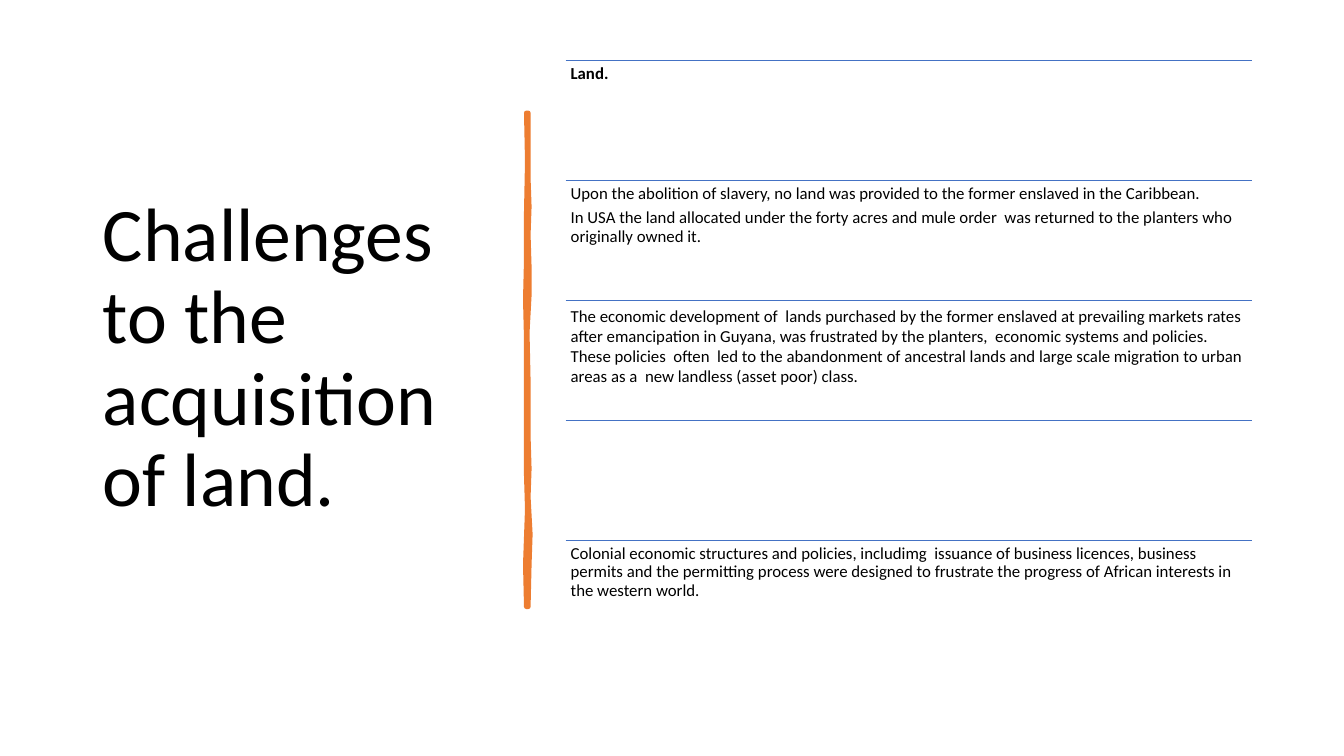
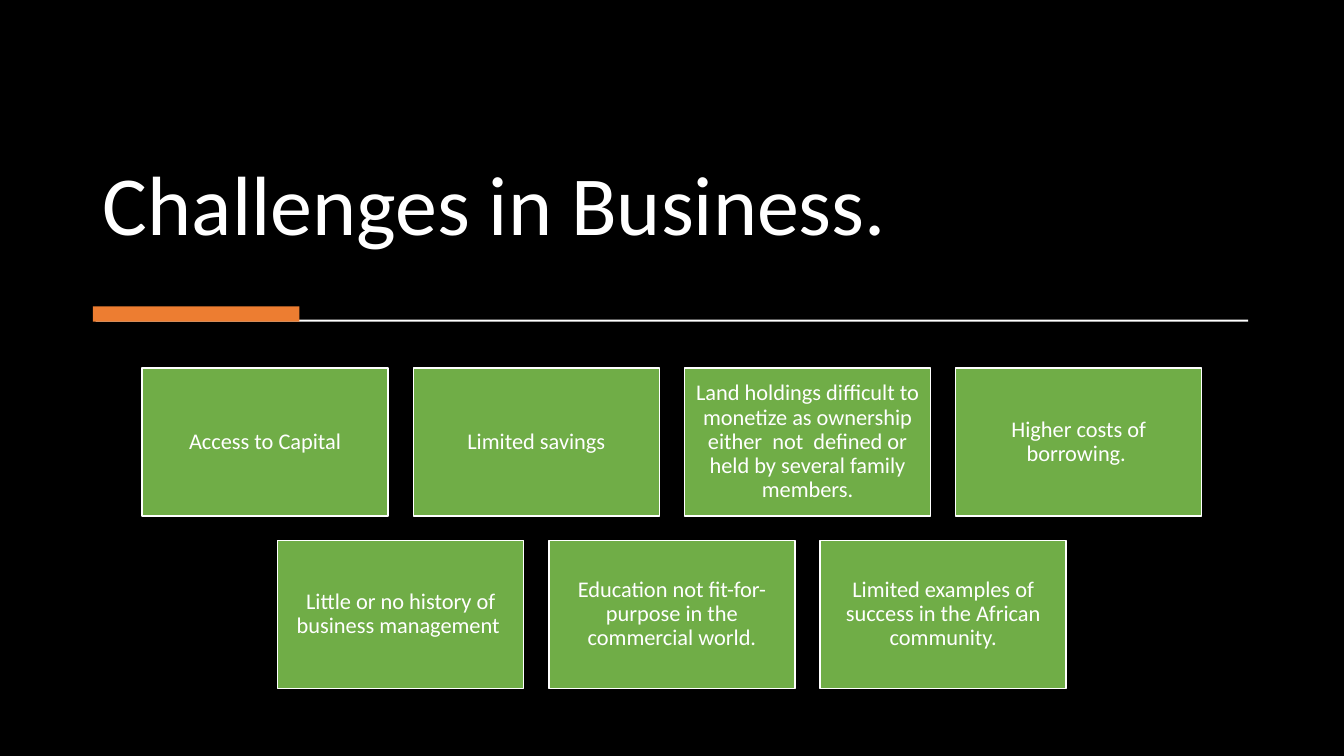
import pptx
import pptx.util
import pptx.dml.color
import pptx.enum.shapes
import pptx.enum.text
import pptx.oxml
import pptx.oxml.ns
from dataclasses import dataclass

Inches = pptx.util.Inches
Pt = pptx.util.Pt
Anchor = pptx.enum.text.MSO_ANCHOR
Align = pptx.enum.text.PP_ALIGN


@dataclass(frozen=True)
class Theme:
    font: str = "Calibri"
    black: str = "000000"
    white: str = "FFFFFF"
    accent: str = "ED7D31"
    rule: str = "4472C4"
    card: str = "70AD47"
    body: float = 12
    label: float = 16
    tight: float = 0.9
    after: float = 0.35
    thin: float = 1
    brush: float = 3.25


THEME = Theme()

LAND = "Challenges to the acquisition of land."
ROWS = [
    {"text": ["Land."], "bold": True},
    {"text": [
        "Upon the abolition of slavery, no land was provided to the former enslaved in the Caribbean.",
        "In USA the land allocated under the forty acres and mule order  was returned to the planters who originally owned it.",
    ]},
    {"text": [
        "The economic development of  lands purchased by the former enslaved at prevailing markets rates "
        "after emancipation in Guyana, was frustrated by the planters,  economic systems and policies. "
        "These policies  often  led to the abandonment of ancestral lands and large scale migration to urban "
        "areas as a  new landless (asset poor) class.",
    ], "lead": 1},
    {"text": []},
    {"text": [
        "Colonial economic structures and policies, includimg  issuance of business licences, business "
        "permits and the permitting process were designed to frustrate the progress of African interests in "
        "the western world.",
    ]},
]
STROKE = [
    (5.24, 1.12), (5.24, 1.77), (5.25, 2.05), (5.24, 2.33), (5.25, 2.65),
    (5.25, 2.93), (5.23, 3.3), (5.24, 3.78), (5.24, 4.33), (5.25, 4.65),
    (5.24, 4.93), (5.26, 5.3), (5.25, 5.6), (5.24, 6.02),
    (5.22, 6.02), (5.21, 5.6), (5.23, 5.05), (5.22, 4.72), (5.22, 4.02),
    (5.22, 3.37), (5.21, 2.97), (5.22, 2.57), (5.22, 2.1), (5.23, 1.6),
    (5.22, 1.12),
]

BUSINESS = "Challenges in Business."
CARDS = [
    ["Access to Capital", "Limited savings",
     "Land holdings difficult to monetize as ownership either  not  defined or held by several family members.",
     "Higher costs of borrowing. "],
    ["Little or no history of business management ",
     "Education not fit-for-purpose in the commercial world.",
     "Limited examples of success in the African community."],
]


def color(code):
    return pptx.dml.color.RGBColor.from_string(code)


def paint(shape, fill, line=None, width=THEME.thin):
    shape.shadow.inherit = False
    shape.fill.solid()
    shape.fill.fore_color.rgb = color(fill)
    if line:
        shape.line.color.rgb = color(line)
        shape.line.width = Pt(width)
    else:
        shape.line.fill.background()


def block(slide, box, fill, line=None):
    kind = pptx.enum.shapes.MSO_SHAPE.RECTANGLE
    shape = slide.shapes.add_shape(kind, *map(Inches, box))
    paint(shape, fill, line)
    return shape


def write(frame, texts, size, tint, align=Align.LEFT, anchor=Anchor.TOP,
          inset=None, lead=THEME.tight, after=THEME.after, bold=False):
    frame.word_wrap = True
    frame.auto_size = pptx.enum.text.MSO_AUTO_SIZE.NONE
    frame.vertical_anchor = anchor
    if inset is not None:
        frame.margin_left = frame.margin_right = Inches(inset)
        frame.margin_top = frame.margin_bottom = Inches(inset)
    frame.text = "\n".join(texts)
    for para in frame.paragraphs:
        para.alignment = align
        para.line_spacing = lead
        para.space_before = Pt(0)
        para.space_after = Pt(size * after)
        for run in para.runs:
            run.font.name = THEME.font
            run.font.size = Pt(size)
            run.font.bold = bold
            run.font.color.rgb = color(tint)


def start(deck, text, box, size, tint, anchor, back):
    slide = deck.slides.add_slide(deck.slide_layouts[5])
    slide.background.fill.solid()
    slide.background.fill.fore_color.rgb = color(back)
    title = slide.shapes.title
    title.left, title.top, title.width, title.height = map(Inches, box)
    write(title.text_frame, [text], size, tint, anchor=anchor, after=0)
    return slide


def rule(slide, left, top, width):
    kind = pptx.enum.shapes.MSO_CONNECTOR.STRAIGHT
    line = slide.shapes.add_connector(
        kind, Inches(left), Inches(top), Inches(left + width), Inches(top))
    line.line.color.rgb = color(THEME.rule)
    line.line.width = Pt(THEME.thin)
    props = line._element.spPr
    props.append(props.makeelement(pptx.oxml.ns.qn("a:effectLst"), {}))


def land(deck):
    slide = start(deck, LAND, (0.92, 0.6, 3.94, 5.94), 54,
                  THEME.black, Anchor.MIDDLE, THEME.white)
    dots = [(Inches(x), Inches(y)) for x, y in STROKE]
    pen = slide.shapes.build_freeform(*dots[0])
    pen.add_line_segments(dots[1:], close=True)
    paint(pen.convert_to_shape(), THEME.accent, THEME.accent, THEME.brush)

    left, top, width, pitch = 5.61, 0.6, 6.81, 1.19
    for i, row in enumerate(ROWS):
        y = top + i * pitch
        rule(slide, left, y, width)
        if row["text"]:
            box = slide.shapes.add_textbox(*map(Inches, (left, y, width, pitch)))
            write(box.text_frame, row["text"], THEME.body, THEME.black,
                  inset=0.05, lead=row.get("lead", THEME.tight),
                  bold=row.get("bold", False))


def business(deck):
    slide = start(deck, BUSINESS, (0.92, 0.47, 11.49, 2.1), 60,
                  THEME.white, Anchor.BOTTOM, THEME.black)
    block(slide, (0.95, 3.17, 11.43, 0.02), THEME.white)
    block(slide, (0.92, 3.04, 2.05, 0.15), THEME.accent)

    wide, high, gap, top, mid = 2.44, 1.47, 0.25, 3.65, 6.665
    for r, names in enumerate(CARDS):
        span = len(names) * (wide + gap) - gap
        y = top + r * (high + gap - 0.01)
        for c, name in enumerate(names):
            x = mid - span / 2 + c * (wide + gap)
            card = block(slide, (x, y, wide, high), THEME.card, THEME.white)
            write(card.text_frame, [name], THEME.label, THEME.white,
                  Align.CENTER, Anchor.MIDDLE, 0.07)


def main():
    deck = pptx.Presentation()
    deck.slide_width = Inches(13.33)
    deck.slide_height = Inches(7.5)
    land(deck)
    business(deck)
    deck.save("out.pptx")


if __name__ == "__main__":
    main()
